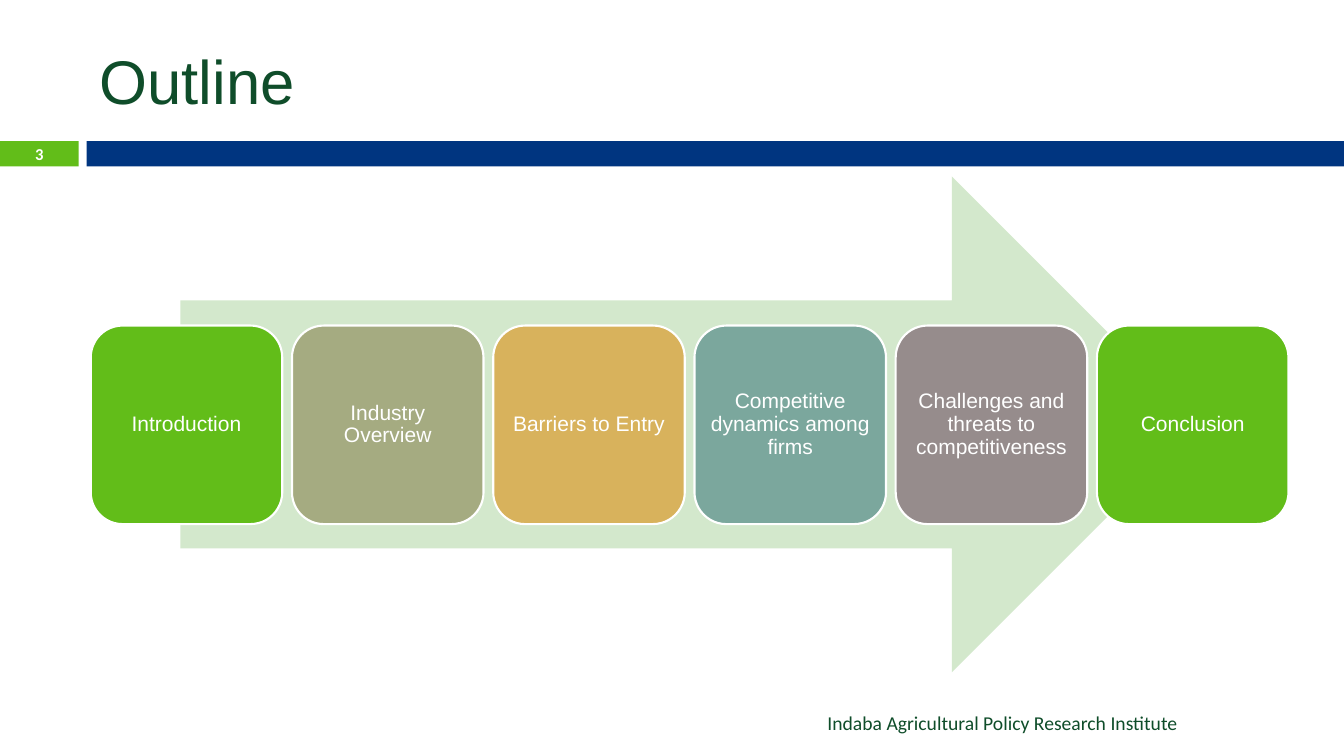
"""Builds the Outline slide: six topic cards on a right-pointing arrow."""
import pptx
import pptx.util
import pptx.dml.color
import pptx.enum.shapes
import pptx.enum.text

Inches = pptx.util.Inches
RGBColor = pptx.dml.color.RGBColor
MSO_SHAPE = pptx.enum.shapes.MSO_SHAPE
PP_ALIGN = pptx.enum.text.PP_ALIGN
MSO_ANCHOR = pptx.enum.text.MSO_ANCHOR

WHITE = RGBColor(0xFF, 0xFF, 0xFF)
DARK_GREEN = RGBColor(0x0F, 0x4D, 0x2A)
GREEN = RGBColor(0x62, 0xBD, 0x19)
BLUE = RGBColor(0x00, 0x35, 0x80)
PALE_GREEN = RGBColor(0xD3, 0xE8, 0xCC)
OLIVE = RGBColor(0xA5, 0xAB, 0x81)
SAND = RGBColor(0xD8, 0xB2, 0x5C)
TEAL = RGBColor(0x7B, 0xA7, 0x9D)
TAUPE = RGBColor(0x96, 0x8C, 0x8C)


def add_shape(kind, left, top, width, height, fill):
    sp = s.shapes.add_shape(kind, Inches(left), Inches(top), Inches(width), Inches(height))
    sp.shadow.inherit = False
    sp.fill.solid()
    sp.fill.fore_color.rgb = fill
    sp.line.fill.background()
    return sp


def write(sp, text, align, anchor, inset, color, font):
    tf = sp.text_frame
    frame = {"word_wrap": True, "vertical_anchor": anchor}
    for side, gap in zip(("left", "top", "right", "bottom"), inset):
        frame[f"margin_{side}"] = Inches(gap)
    for name, value in frame.items():
        setattr(tf, name, value)
    p = tf.paragraphs[0]
    p.alignment = align
    r = p.add_run()
    r.text = text
    r.font.color.rgb = color
    for name, value in font.items():
        setattr(r.font, name, value)
    return p


prs = pptx.Presentation()
prs.slide_width, prs.slide_height = Inches(13.33), Inches(7.5)
s = prs.slides.add_slide(prs.slide_layouts[6])

number = add_shape(MSO_SHAPE.RECTANGLE, 0, 1.4, 0.78, 0.25, GREEN)
write(number, "3", PP_ALIGN.CENTER, MSO_ANCHOR.MIDDLE, (0, 0, 0, 0), WHITE,
      {"name": "Calibri", "size": pptx.util.Pt(11.9), "bold": True})
add_shape(MSO_SHAPE.RECTANGLE, 0.86, 1.4, 12.47, 0.25, BLUE)

footer = s.shapes.add_textbox(Inches(6.11), Inches(7), Inches(5.67), Inches(0.34))
write(footer, "Indaba Agricultural Policy Research Institute", PP_ALIGN.RIGHT,
      MSO_ANCHOR.TOP, (0.1, 0.05, 0.1, 0.05), DARK_GREEN,
      {"name": "Calibri", "size": pptx.util.Pt(14)})

title = s.shapes.add_textbox(Inches(0.89), Inches(0.25), Inches(11.89), Inches(1.08))
write(title, "Outline", PP_ALIGN.LEFT, MSO_ANCHOR.MIDDLE, (0.1, 0.05, 0.1, 0.05),
      DARK_GREEN, {"name": "Arial", "size": pptx.util.Pt(44)})

add_shape(MSO_SHAPE.RIGHT_ARROW, 1.79, 1.75, 10.11, 4.92, PALE_GREEN)

topics = [
    ("Introduction", GREEN),
    ("Industry Overview", OLIVE),
    ("Barriers to Entry", SAND),
    ("Competitive dynamics among firms", TEAL),
    ("Challenges and threats to competitiveness", TAUPE),
    ("Conclusion", GREEN),
]
first_left, last_left = 0.9, 10.88
step = (last_left - first_left) / (len(topics) - 1)
for i, (topic, color) in enumerate(topics):
    card = add_shape(MSO_SHAPE.ROUNDED_RECTANGLE, first_left + i * step, 3.23, 1.9, 1.97, color)
    card.line.color.rgb = WHITE
    card.line.width = pptx.util.Pt(1.5)
    p = write(card, topic, PP_ALIGN.CENTER, MSO_ANCHOR.MIDDLE, (0.06, 0.06, 0.06, 0.06),
              WHITE, {"name": "Arial", "size": pptx.util.Pt(15)})
    p.line_spacing = 0.9

prs.save("out.pptx")
